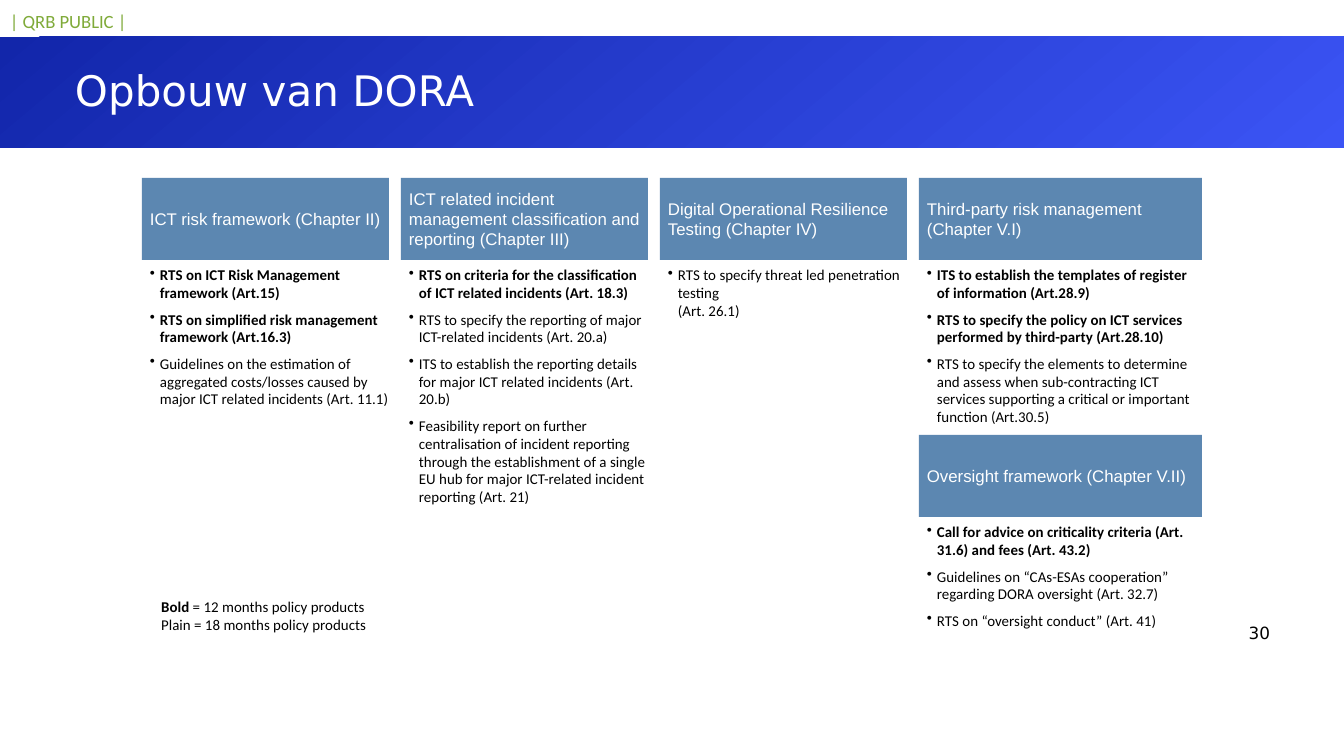
import pptx
import pptx.util
import pptx.dml.color
import pptx.enum.shapes
import pptx.enum.text
from lxml import etree

EMU_PER_PX = 914400 / 134.4
SLIDE_WIDTH, SLIDE_HEIGHT = 1344, 756

RGBColor = pptx.dml.color.RGBColor
WHITE = RGBColor(0xFF, 0xFF, 0xFF)
BLACK = RGBColor(0x00, 0x00, 0x00)
GREEN = RGBColor(0x7F, 0xAA, 0x39)
STEEL = RGBColor(0x5C, 0x87, 0xB1)
BAND_DARK = RGBColor(0x12, 0x26, 0xAA)
BAND_LIGHT = RGBColor(0x3B, 0x54, 0xF5)

MIDDLE = pptx.enum.text.MSO_ANCHOR.MIDDLE
TOP = pptx.enum.text.MSO_ANCHOR.TOP
LEFT = pptx.enum.text.PP_ALIGN.LEFT
RIGHT = pptx.enum.text.PP_ALIGN.RIGHT

# Column grid
COLUMN_LEFT, COLUMN_PITCH = 142, 259
COLUMN_WIDTH, LAST_WIDTH = 247, 283
HEADER_HEIGHT = 82
UPPER_TOP, LOWER_TOP = 178, 435

# Column index, top, body height, heading, bold (12 months) items, plain (18 months) items
SECTIONS = [
    (0, UPPER_TOP, 167, "ICT risk framework (Chapter II)",
     ["RTS on ICT Risk Management framework (Art.15)",
      "RTS on simplified risk management framework (Art.16.3)"],
     ["Guidelines on the estimation of aggregated costs/losses caused by "
      "major ICT related incidents (Art. 11.1)"]),
    (1, UPPER_TOP, 167,
     "ICT related incident management classification and reporting (Chapter III)",
     ["RTS on criteria for the classification of ICT related incidents (Art. 18.3)"],
     ["RTS to specify the reporting of major ICT-related incidents (Art. 20.a)",
      "ITS to establish the reporting details for major ICT related incidents (Art. 20.b)",
      "Feasibility report on further centralisation of incident reporting through the "
      "establishment of a single EU hub for major ICT-related incident reporting (Art. 21)"]),
    (2, UPPER_TOP, 167, "Digital Operational Resilience Testing (Chapter IV)",
     [],
     ["RTS to specify threat led penetration testing\n(Art. 26.1)"]),
    (3, UPPER_TOP, 153, "Third-party risk management (Chapter V.I)",
     ["ITS to establish the templates of register of information (Art.28.9)",
      "RTS to specify the policy on ICT services performed by third-party (Art.28.10)"],
     ["RTS to specify the elements to determine and assess when sub-contracting ICT "
      "services supporting a critical or important function (Art.30.5)"]),
    (3, LOWER_TOP, 109, "Oversight framework (Chapter V.II)",
     ["Call for advice on criticality criteria (Art. 31.6) and fees (Art. 43.2)"],
     ["Guidelines on “CAs-ESAs cooperation” regarding DORA oversight (Art. 32.7)",
      "RTS on “oversight conduct” (Art. 41)"]),
]


def px(value):
    return pptx.util.Emu(round(value * EMU_PER_PX))


def box(*lengths):
    return [px(length) for length in lengths]


def set_font(target, name, size, color, bold=False):
    target.font.name = name
    target.font.size = pptx.util.Pt(size)
    target.font.color.rgb = color
    target.font.bold = bold


def set_frame(frame, insets=(0, 0, 0, 0), anchor=TOP):
    frame.word_wrap = True
    frame.vertical_anchor = anchor
    (frame.margin_left, frame.margin_top,
     frame.margin_right, frame.margin_bottom) = box(*insets)


def add_rectangle(slide, bounds):
    shape = slide.shapes.add_shape(
        pptx.enum.shapes.MSO_SHAPE.RECTANGLE, *box(*bounds))
    shape.shadow.inherit = False
    shape.line.fill.background()
    return shape


def add_label(slide, bounds, text, name, size, color, anchor=TOP, alignment=LEFT):
    frame = slide.shapes.add_textbox(*box(*bounds)).text_frame
    set_frame(frame, anchor=anchor)
    paragraph = frame.paragraphs[0]
    paragraph.text = text
    paragraph.alignment = alignment
    set_font(paragraph, name, size, color)


def add_title_band(slide, text):
    band = add_rectangle(slide, (0, 37, SLIDE_WIDTH, 111))
    band.fill.gradient()
    band.fill.gradient_angle = 310
    for stop, color, position in zip(
            band.fill.gradient_stops, (BAND_DARK, BAND_LIGHT), (0, 1)):
        stop.color.rgb = color
        stop.position = position

    title = slide.shapes.title
    title._element.addprevious(band._element)  # band behind the title
    title.left, title.top, title.width, title.height = box(75, 64, 1195, 54)
    set_frame(title.text_frame)
    title.text_frame.auto_size = pptx.enum.text.MSO_AUTO_SIZE.NONE
    paragraph = title.text_frame.paragraphs[0]
    paragraph.text = text
    paragraph.alignment = LEFT
    set_font(paragraph, "DejaVu Sans", 22.5, WHITE)


def add_header(slide, bounds, text):
    header = add_rectangle(slide, bounds)
    header.fill.solid()
    header.fill.fore_color.rgb = STEEL
    set_frame(header.text_frame, (8, 6, 8, 6), MIDDLE)
    paragraph = header.text_frame.paragraphs[0]
    paragraph.text = text
    paragraph.alignment = LEFT
    set_font(paragraph, "Arial", 9, WHITE)


def add_bullet(paragraph):
    properties = paragraph._p.get_or_add_pPr()
    properties.set("marL", str(px(10)))
    properties.set("indent", str(px(-10)))
    namespace = pptx.oxml.ns.qn("a:buChar")
    etree.SubElement(properties, namespace).set("char", "•")


def add_items(slide, bounds, bold_items, plain_items):
    frame = slide.shapes.add_textbox(*box(*bounds)).text_frame
    set_frame(frame, (8, 6, 0, 6))
    for index, text in enumerate(bold_items + plain_items):
        paragraph = frame.add_paragraph() if index else frame.paragraphs[0]
        paragraph.text = text
        add_bullet(paragraph)
        paragraph.space_after = pptx.util.Pt(4.5)
        set_font(paragraph, "Calibri", 8, BLACK, index < len(bold_items))


def add_section(slide, column, top, body_height, heading, bold_items, plain_items):
    left = COLUMN_LEFT + column * COLUMN_PITCH
    width = LAST_WIDTH if column == 3 else COLUMN_WIDTH
    add_header(slide, (left, top, width, HEADER_HEIGHT), heading)
    add_items(slide, (left, top + HEADER_HEIGHT, width, body_height),
              bold_items, plain_items)


def add_legend(slide):
    frame = slide.shapes.add_textbox(*box(148, 591, 234, 50)).text_frame
    frame.word_wrap = False
    frame.auto_size = pptx.enum.text.MSO_AUTO_SIZE.SHAPE_TO_FIT_TEXT
    lines = [[("Bold", True), (" = 12 months policy products", False)],
             [("Plain = 18 months policy products", False)]]
    for index, line in enumerate(lines):
        paragraph = frame.add_paragraph() if index else frame.paragraphs[0]
        for text, bold in line:
            run = paragraph.add_run()
            run.text = text
            set_font(run, "Calibri", 8, BLACK, bold)


def main():
    presentation = pptx.Presentation()
    presentation.slide_width, presentation.slide_height = box(SLIDE_WIDTH, SLIDE_HEIGHT)
    slide = presentation.slides.add_slide(presentation.slide_layouts[5])

    # Title band, classification tag and page number
    add_title_band(slide, "Opbouw van DORA")
    add_label(slide, (10, 10, 122, 23), "| QRB PUBLIC |", "Calibri", 10, GREEN)
    add_label(slide, (1194, 618, 76, 30), "30", "DejaVu Sans", 9, BLACK, MIDDLE, RIGHT)

    # Chapters with their policy products
    for section in SECTIONS:
        add_section(slide, *section)
    add_legend(slide)

    presentation.save("out.pptx")


if __name__ == "__main__":
    main()
